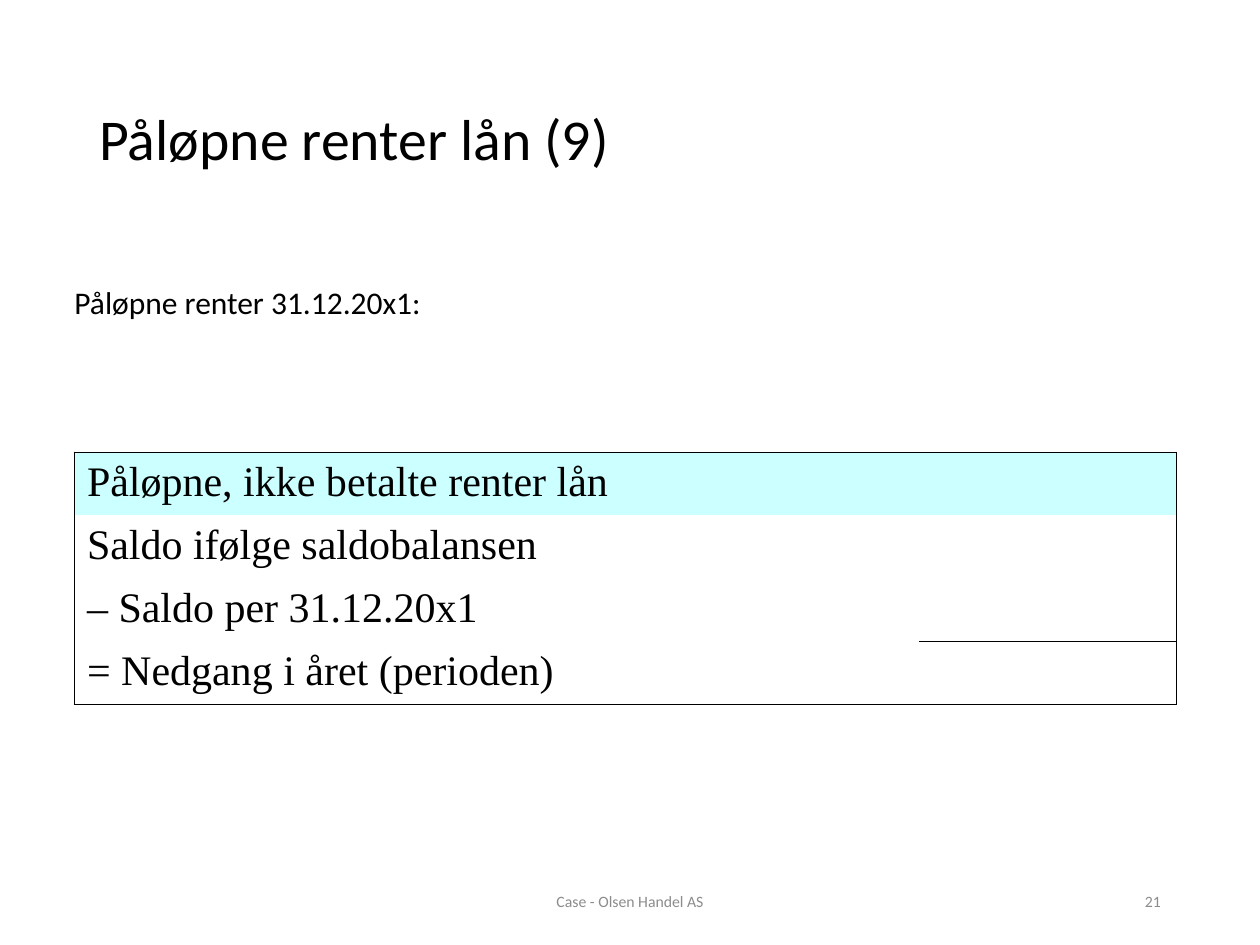
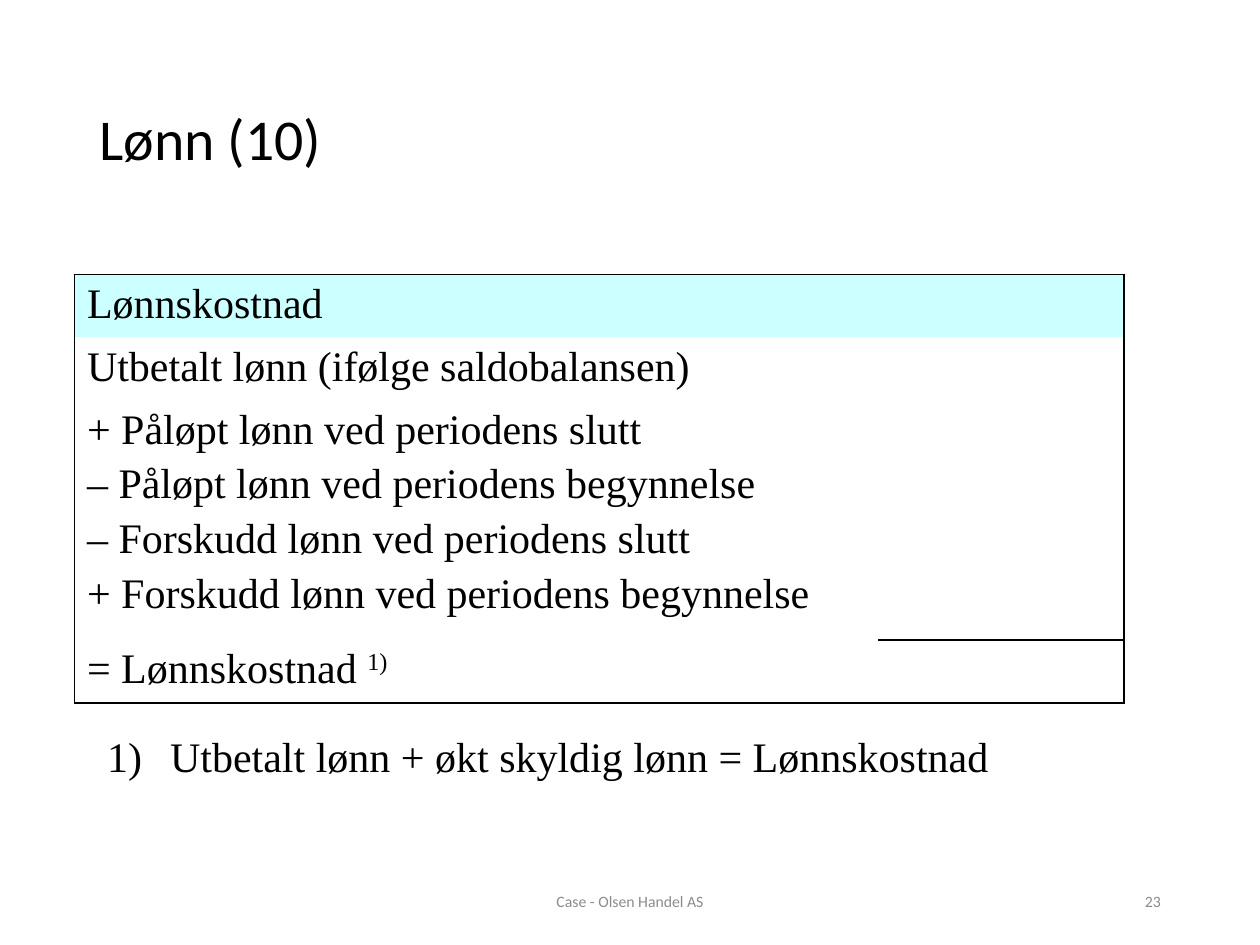
from dataclasses import dataclass

from lxml import etree
from pptx import Presentation
from pptx import util as u
from pptx.dml.color import RGBColor
from pptx.enum import text
from pptx.oxml import ns


@dataclass(frozen=True)
class Theme:
    ink: RGBColor = RGBColor(0, 0, 0)
    muted: RGBColor = RGBColor(0x8C, 0x8C, 0x8C)
    header_fill: RGBColor = RGBColor(0xCC, 0xFF, 0xFF)
    sans: str = "Calibri"
    serif: str = "Times New Roman"
    title_size: int = 33
    lead_size: int = 18
    body_size: int = 24
    footer_size: int = 9
    line_gap: float = 4.8
    rule: float = 1


@dataclass(frozen=True)
class Box:
    left: float
    top: float
    width: float
    height: float

    def frame(self):
        return [u.Cm(n) for n in (self.left, self.top, self.width, self.height)]


THEME = Theme()
PAGE = Box(0, 0, 25.4, 19.05)
TITLE = Box(1.75, 1.02, 21.9, 3.68)
FOOTER = Box(1.75, 17.66, 21.9, 1.02)
FOOTER_TEXT = "Case - Olsen Handel AS"
ROW = 1.19
LABEL_SHARE = 0.766


def style(para, size, face=THEME.sans, color=THEME.ink, align=text.PP_ALIGN.LEFT):
    para.font.size = u.Pt(size)
    para.font.name = face
    para.font.color.rgb = color
    para.alignment = align


def add_text(page, box, words, anchor=text.MSO_ANCHOR.TOP, **look):
    frame = page.shapes.add_textbox(*box.frame()).text_frame
    frame.word_wrap = True
    frame.vertical_anchor = anchor
    para = frame.paragraphs[0]
    para.text = words
    style(para, **look)
    return para


def add_footer(page, box, number):
    middle_width, number_width = 8.58, 5.72
    middle = Box(box.left + (box.width - middle_width) / 2, box.top,
                 middle_width, box.height)
    right = Box(box.left + box.width - number_width, box.top,
                number_width, box.height)
    for place, words, align in (
        (middle, FOOTER_TEXT, text.PP_ALIGN.CENTER),
        (right, str(number), text.PP_ALIGN.RIGHT),
    ):
        add_text(page, place, words, text.MSO_ANCHOR.MIDDLE,
                 size=THEME.footer_size, color=THEME.muted, align=align)


def add_page(deck, title, number):
    page = deck.slides.add_slide(deck.slide_layouts[5])
    shape = page.shapes.title
    shape.left, shape.top, shape.width, shape.height = TITLE.frame()
    shape.text_frame.vertical_anchor = text.MSO_ANCHOR.MIDDLE
    para = shape.text_frame.paragraphs[0]
    para.text = title
    para.line_spacing = 0.9
    style(para, THEME.title_size)
    add_footer(page, FOOTER, number)
    return page


def set_borders(cell, drawn):
    props = cell._tc.get_or_add_tcPr()
    for place, side in enumerate("LRTB"):
        line = etree.Element(ns.qn(f"a:ln{side}"), w=str(u.Pt(THEME.rule)))
        if side in drawn:
            fill = etree.SubElement(line, ns.qn("a:solidFill"))
            etree.SubElement(fill, ns.qn("a:srgbClr"), val=str(THEME.ink))
        else:
            etree.SubElement(line, ns.qn("a:noFill"))
        props.insert(place, line)


def fill_label(cell, lines):
    frame = cell.text_frame
    for index, words in enumerate(lines):
        para = frame.add_paragraph() if index else frame.paragraphs[0]
        label, mark, note = words.partition("^")
        para.add_run().text = label
        if mark:
            span = para.add_run()
            span.text = note
            span._r.get_or_add_rPr().set("baseline", "30000")
        style(para, THEME.body_size, THEME.serif)
        para.space_before = u.Pt(THEME.line_gap)


def add_statement(page, box, rows, heights):
    table = page.shapes.add_table(len(rows), 2, *box.frame()).table
    table.first_row = table.horz_banding = False
    for column, share in zip(table.columns, (LABEL_SHARE, 1 - LABEL_SHARE)):
        column.width = u.Cm(box.width * share)
    last = len(rows) - 1
    for index, (lines, height) in enumerate(zip(rows, heights)):
        table.rows[index].height = u.Cm(height)
        label, amount = table.cell(index, 0), table.cell(index, 1)
        fill_label(label, lines)
        outer = ("T" if index == 0 else "") + ("B" if index == last else "")
        total = {last - 1: "B", last: "T"}.get(index, "")
        for cell, drawn in ((label, "L" + outer), (amount, "R" + outer + total)):
            if index == 0:
                cell.fill.solid()
                cell.fill.fore_color.rgb = THEME.header_fill
            else:
                cell.fill.background()
            set_borders(cell, drawn)


def add_footnote(page, box, words):
    para = add_text(page, box, words, size=THEME.body_size, face=THEME.serif)
    props = para._p.get_or_add_pPr()
    props.set("marL", str(u.Cm(1.27)))
    props.set("indent", str(-u.Cm(1.27)))
    etree.SubElement(props, ns.qn("a:buFont"), typeface=THEME.serif)
    etree.SubElement(props, ns.qn("a:buAutoNum"), type="arabicParenR")
    props.append(props.find(ns.qn("a:defRPr")))


def build_interest(deck):
    page = add_page(deck, "Påløpne renter lån (9)", 21)
    add_statement(
        page, Box(1.5, 9.12, 22.22, 4.84),
        [["Påløpne, ikke betalte renter lån"],
         ["Saldo ifølge saldobalansen"],
         ["– Saldo per 31.12.20x1"],
         ["= Nedgang i året (perioden)"]],
        [ROW, ROW, 1.27, ROW])
    add_text(page, Box(1.25, 5.59, 7.72, 1.8), "Påløpne renter 31.12.20x1:",
             size=THEME.lead_size)


def build_wages(deck):
    page = add_page(deck, "Lønn (10)", 23)
    add_statement(
        page, Box(1.5, 5.53, 21.16, 8.1),
        [["Lønnskostnad"],
         ["Utbetalt lønn (ifølge saldobalansen)"],
         ["+ Påløpt lønn ved periodens slutt",
          "– Påløpt lønn ved periodens begynnelse",
          "– Forskudd lønn ved periodens slutt",
          "+ Forskudd lønn ved periodens begynnelse"],
         ["= Lønnskostnad ^1)"]],
        [ROW, ROW, 4.53, ROW])
    add_footnote(page, Box(1.91, 14.61, 18.8, 1.27),
                 "Utbetalt lønn + økt skyldig lønn = Lønnskostnad")


def main():
    deck = Presentation()
    deck.slide_width, deck.slide_height = PAGE.frame()[2:]
    build_interest(deck)
    build_wages(deck)
    deck.save("out.pptx")


if __name__ == "__main__":
    main()
